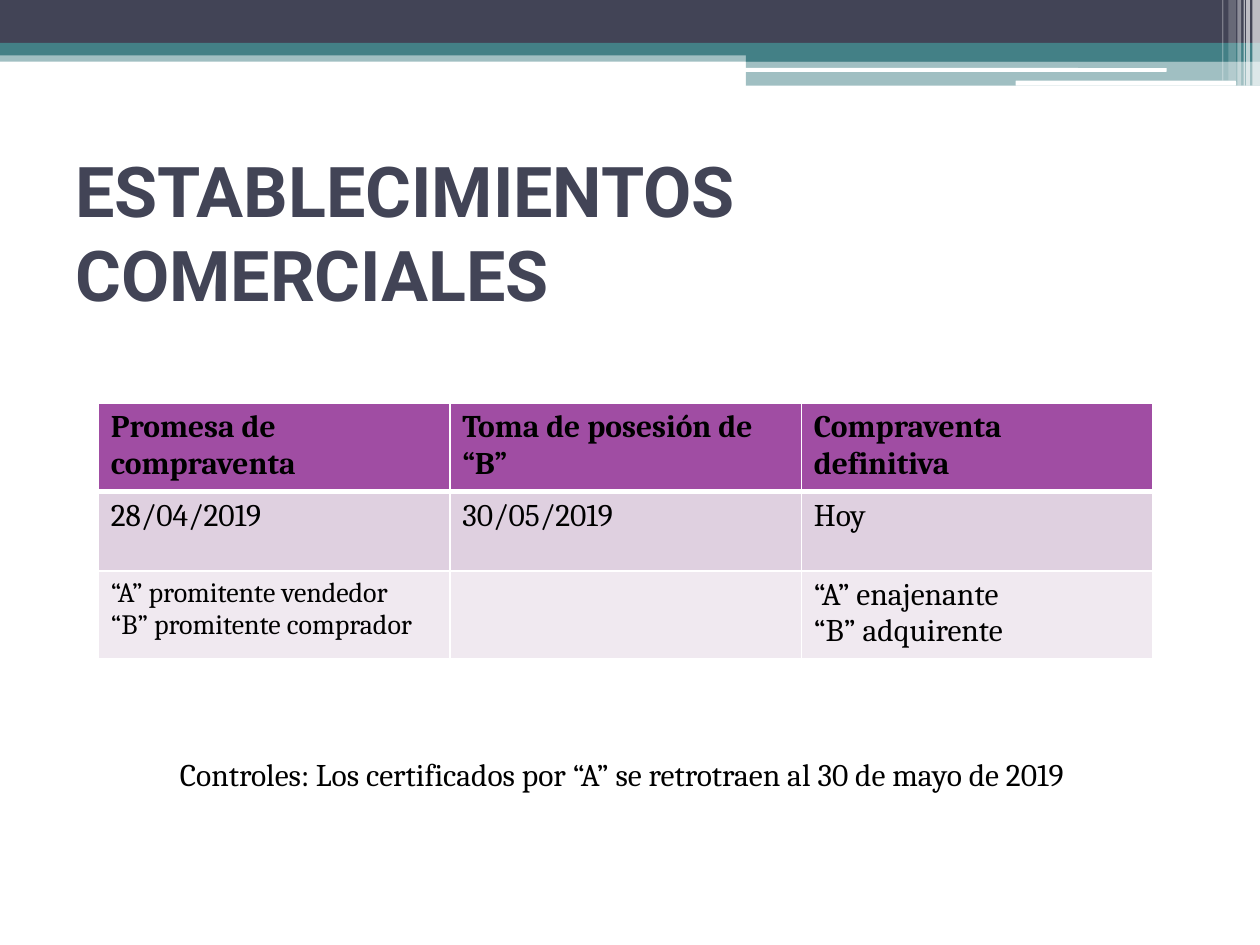
from lxml.etree import SubElement
from pptx import Presentation
from pptx.dml.color import RGBColor
from pptx.enum.shapes import MSO_SHAPE as Shape
from pptx.enum.text import MSO_ANCHOR as Anchor
from pptx.oxml.ns import qn
from pptx.util import Inches, Pt

NAVY, TEAL, WHITE, BLACK = "424456", "438086", "FFFFFF", "000000"
PURPLE, LILAC, PALE = "A04DA3", "DFD0E0", "F0E9F0"


def paint(fill, color, opacity=100):
    fill.solid()
    fill.fore_color.rgb = RGBColor.from_string(color)
    if opacity < 100:
        tint = fill._xPr.find(qn("a:solidFill"))[0]
        SubElement(tint, qn("a:alpha"), val=str(opacity * 1000))


class SlideBuilder:
    heading_font = "Roboto"
    body_font = "Cambria"

    def __init__(self, slide):
        self.shapes = slide.shapes

    def band(self, box, color, opacity=100, kind=Shape.RECTANGLE):
        band = self.shapes.add_shape(kind, *map(Inches, box))
        band.shadow.inherit = False
        band.line.fill.background()
        paint(band.fill, color, opacity)

    def set_text(self, frame, text, size, font, color, bold=False):
        frame.text = text
        for paragraph in frame.paragraphs:
            style = paragraph.font
            style.name, style.size, style.bold = font, Pt(size), bold
            style.color.rgb = RGBColor.from_string(color)

    def text(self, box, text, size, font, color, bold=False, anchor=Anchor.TOP):
        frame = self.shapes.add_textbox(*map(Inches, box)).text_frame
        frame.word_wrap = True
        frame.vertical_anchor = anchor
        self.set_text(frame, text, size, font, color, bold)

    def borders(self, cell, **widths):
        properties = cell._tc.get_or_add_tcPr()
        for side in "LRTB":
            width = Pt(widths.get(side, 1))
            line = SubElement(properties, qn(f"a:ln{side}"), w=str(width))
            solid = SubElement(line, qn("a:solidFill"))
            SubElement(solid, qn("a:srgbClr"), val=WHITE)

    def table(self, left, top, column_width, row_height, rows, fills, sizes):
        columns = len(rows[0])
        table = self.shapes.add_table(
            len(rows), columns, Inches(left), Inches(top),
            Inches(column_width * columns), Inches(row_height * len(rows))).table
        for column in table.columns:
            column.width = Inches(column_width)
        for r, row in enumerate(rows):
            table.rows[r].height = Inches(row_height)
            for c, text in enumerate(row):
                cell = table.cell(r, c)
                # A thicker rule parts the header from the body
                self.borders(cell, B=3 if r == 0 else 1, T=3 if r == 1 else 1)
                paint(cell.fill, fills[r])
                self.set_text(cell.text_frame, text, sizes[r][c],
                              self.body_font, BLACK, bold=r == 0)


def main():
    presentation = Presentation()
    presentation.slide_width, presentation.slide_height = Inches(10), Inches(7.5)
    builder = SlideBuilder(presentation.slides.add_slide(presentation.slide_layouts[6]))

    # Header bands
    for box, color, opacity in [
        ((0, 0.4, 10, 0.09), TEAL, 50),
        ((0, 0, 10, 0.34), NAVY, 100),
        ((0, 0.34, 10, 0.1), TEAL, 100),
        ((5.92, 0.39, 4.08, 0.1), TEAL, 100),
        ((5.92, 0.48, 4.08, 0.2), TEAL, 50),
    ]:
        builder.band(box, color, opacity)
    for box in [(5.91, 0.54, 3.35, 0.03), (8.06, 0.64, 1.75, 0.04)]:
        builder.band(box, WHITE, kind=Shape.ROUNDED_RECTANGLE)

    # Translucent stripes in the right corner
    for left, width, height, opacity in [
        (9.94, 0.06, 0.68, 65), (9.89, 0.03, 0.68, 65), (9.87, 0.01, 0.68, 60),
        (9.82, 0.03, 0.68, 40), (9.75, 0.06, 0.64, 20), (9.7, 0.01, 0.64, 30),
    ]:
        builder.band((left, 0, width, height), WHITE, opacity)

    # Title
    builder.text((0.5, 1.25, 9, 1.17), "ESTABLECIMIENTOS COMERCIALES", 40,
                 builder.heading_font, NAVY, bold=True, anchor=Anchor.MIDDLE)

    # Stages of the sale
    stages = [
        ["Promesa de compraventa", "Toma de posesión de “B”", "Compraventa definitiva"],
        ["28/04/2019", "30/05/2019", "Hoy"],
        ["“A” promitente vendedor\n“B” promitente comprador", "",
         "“A” enajenante\n“B” adquirente"],
    ]
    builder.table(0.78, 3.2, 2.79, 0.63, stages, fills=[PURPLE, LILAC, PALE],
                  sizes=[[18] * 3, [18] * 3, [16, 18, 18]])

    # Closing remark
    builder.text((1.33, 5.94, 7.27, 0.71),
                 "Controles: Los certificados por “A” se retrotraen al 30 de mayo de 2019",
                 18, builder.body_font, BLACK)

    presentation.save("out.pptx")


if __name__ == "__main__":
    main()
